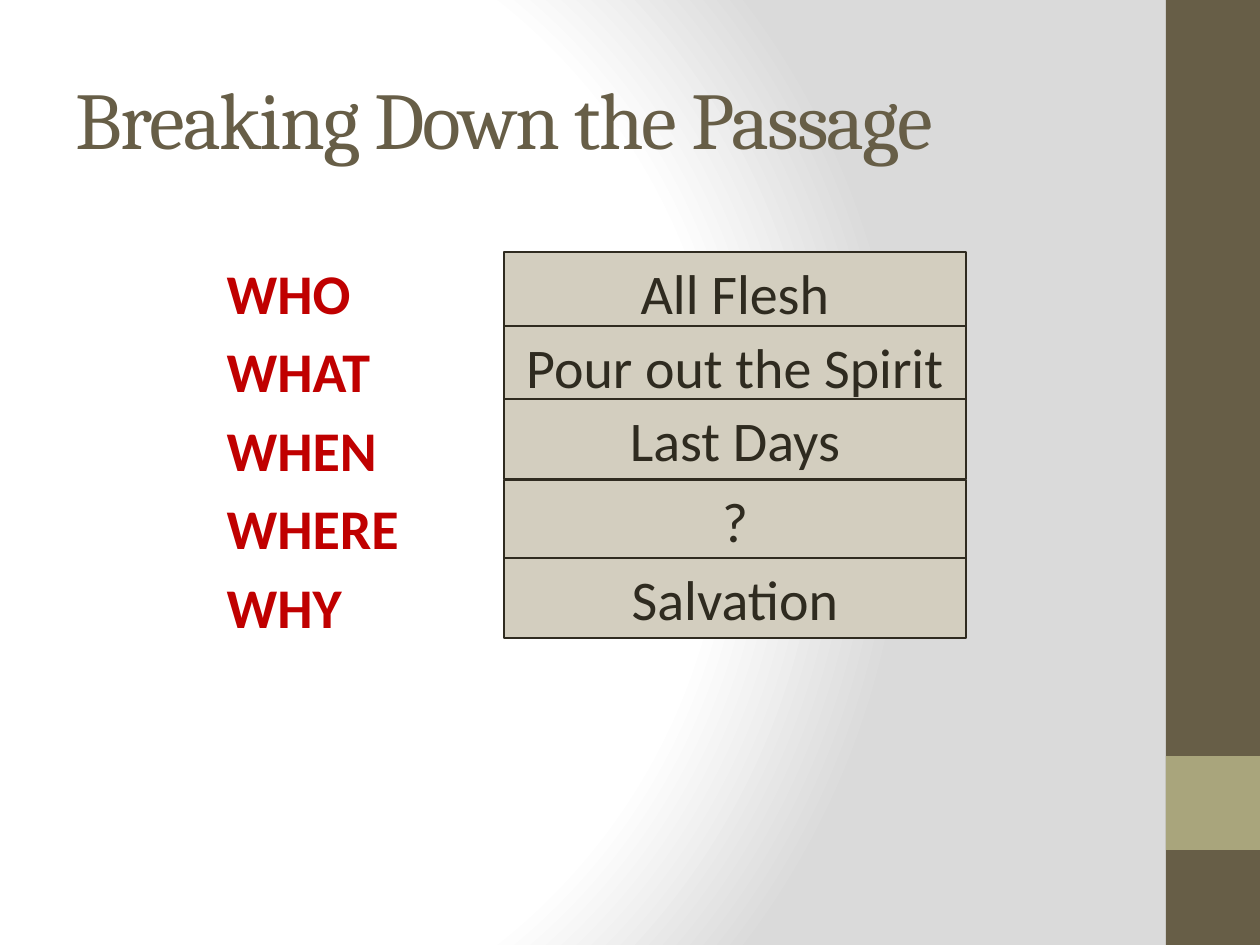
"""Build the slide 'Breaking Down the Passage'."""
from pptx import Presentation
from pptx.dml.color import RGBColor
from pptx.enum.shapes import MSO_SHAPE
from pptx.enum.text import MSO_ANCHOR, MSO_AUTO_SIZE, PP_ALIGN
from pptx.oxml import parse_xml
from pptx.oxml.ns import nsdecls
from pptx.util import Emu, Pt

RECTANGLE = MSO_SHAPE.RECTANGLE
MIDDLE, TOP = MSO_ANCHOR.MIDDLE, MSO_ANCHOR.TOP
LEFT, CENTER = PP_ALIGN.LEFT, PP_ALIGN.CENTER
GROW, FIXED = MSO_AUTO_SIZE.SHAPE_TO_FIT_TEXT, MSO_AUTO_SIZE.NONE
EMU_PER_PX = 914400 / 126
BROWN, OLIVE, SAND, INK, RED = "675E47", "A9A57C", "D3CEBF", "2F2B20", "C00000"


def px(length):
    return Emu(round(length * EMU_PER_PX))


def write(shape, text, *, size, color, font="Calibri", bold=False, align=LEFT,
          anchor=TOP, fit=FIXED, indent=None, spacing=0):
    frame = shape.text_frame
    frame.text = text
    frame.word_wrap = True
    frame.auto_size = fit
    frame.vertical_anchor = anchor
    for paragraph in frame.paragraphs:
        paragraph.alignment = align
        if indent is not None:
            properties = paragraph._p.get_or_add_pPr()
            properties.set("marL", str(px(indent)))
            properties.set("indent", "0")
            properties.append(parse_xml(f"<a:buNone {nsdecls('a')}/>"))
        for run in paragraph.runs:
            run.font.name = font
            run.font.size = Pt(size)
            run.font.bold = bold
            run.font.color.rgb = RGBColor.from_string(color)
            if spacing:
                run.font._element.set("spc", str(spacing * 100))


prs = Presentation()
prs.slide_width, prs.slide_height = px(1260), px(945)
slide = prs.slides.add_slide(prs.slide_layouts[1])

slide.element.cSld.insert(0, parse_xml(
    f"<p:bg {nsdecls('p', 'a')}><p:bgPr><a:gradFill rotWithShape='1'><a:gsLst>"
    "<a:gs pos='0'><a:srgbClr val='FFFFFF'/></a:gs>"
    "<a:gs pos='75000'><a:srgbClr val='FFFFFF'/></a:gs>"
    "<a:gs pos='100000'><a:srgbClr val='DADADA'/></a:gs></a:gsLst>"
    "<a:path path='circle'><a:fillToRect l='20000' t='50000' r='100000' b='50000'/>"
    "</a:path></a:gradFill><a:effectLst/></p:bgPr></p:bg>"))

for top, height, color in ((0, 945, BROWN), (756, 94, OLIVE)):
    band = slide.shapes.add_shape(RECTANGLE, px(1166), px(top), px(94), px(height))
    band.shadow.inherit = False
    band.fill.solid()
    band.fill.fore_color.rgb = RGBColor.from_string(color)
    band.line.fill.background()

title = slide.shapes.title
title.left, title.top, title.width, title.height = px(63), px(38), px(1050), px(158)
write(title, "Breaking Down the Passage", size=46, color=BROWN, font="Cambria",
      anchor=MIDDLE, spacing=-1)

questions = slide.placeholders[1]
questions.left, questions.top = px(199), px(252)
questions.width, questions.height = px(220), px(410)
write(questions, "WHO\nWHAT\nWHEN\nWHERE\nWHY", size=32, color=RED, bold=True, indent=15)

answers = (("All Flesh", 252), ("Pour out the Spirit", 326), ("Last Days", 399),
           ("?", 480), ("Salvation", 558))
for text, top in answers:
    answer = slide.shapes.add_shape(RECTANGLE, px(504), px(top), px(462), px(80))
    answer.shadow.inherit = False
    answer.fill.solid()
    answer.fill.fore_color.rgb = RGBColor.from_string(SAND)
    answer.line.color.rgb = RGBColor.from_string(INK)
    answer.line.width = Pt(0.75)
    write(answer, text, size=32, color=INK, align=CENTER, fit=GROW)

prs.save("out.pptx")
